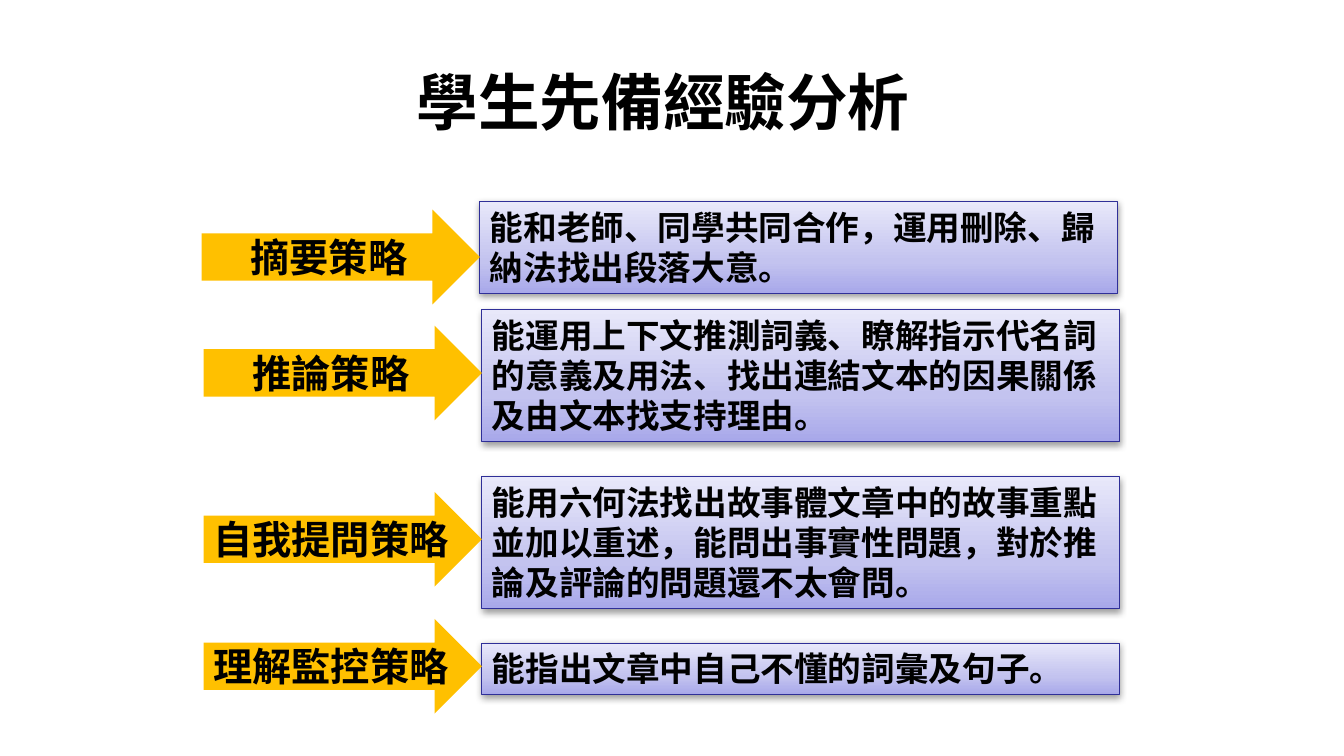
from copy import deepcopy

from lxml.etree import SubElement
from pptx import Presentation
from pptx.dml.color import RGBColor
from pptx.enum.shapes import MSO_SHAPE as SHAPE
from pptx.enum.text import MSO_ANCHOR as ANCHOR, PP_ALIGN as ALIGN
from pptx.oxml.ns import qn
from pptx.util import Pt

PX = 9144  # EMU per px, 100 px to the inch
FONT = "Noto Sans CJK SC"
BLACK, AMBER, NAVY = "000000", "FFC000", "2F2F98"
LILAC = [(0, "E8E8FA"), (0.65, "C3C3EF"), (1, "A8A8EA")]
ARROW_W, ARROW_H, NOTE_W = 276, 94, 632

# label, description, left, arrow top, note top, note height
STRATEGIES = [
    ("摘要策略", "能和老師、同學共同合作，運用刪除、歸納法找出段落大意。",
     200, 208, 200, 91),
    ("推論策略", "能運用上下文推測詞義、瞭解指示代名詞的意義及用法、找出連結文本的因果關係及由文本找支持理由。",
     202, 323, 307, 131),
    ("自我提問策略", "能用六何法找出故事體文章中的故事重點並加以重述，能問出事實性問題，對於推論及評論的問題還不太會問。",
     202, 488, 473, 131),
    ("理解監控策略", "能指出文章中自己不懂的詞彙及句子。",
     202, 614, 638, 51),
]


def px(*lengths):
    return [n * PX for n in lengths]


def color(value):
    return RGBColor.from_string(value)


def write(sp, text, size, align=ALIGN.LEFT, anchor=ANCHOR.TOP, wrap=True):
    tf = sp.text_frame
    tf.word_wrap = wrap
    tf.vertical_anchor = anchor
    p = tf.paragraphs[0]
    p.alignment = align
    r = p.add_run()
    r.text = text
    r.font.size = Pt(size)
    r.font.bold = True
    r.font.name = FONT
    r.font.color.rgb = color(BLACK)
    SubElement(r.font._element, qn("a:ea"), typeface=FONT)


def add_soft_shadow(sp):
    effects = SubElement(sp._element.spPr, qn("a:effectLst"))
    shadow = SubElement(effects, qn("a:outerShdw"), blurRad=str(Pt(5)),
                        dist=str(Pt(1.6)), dir="5400000", rotWithShape="0")
    tint = SubElement(shadow, qn("a:srgbClr"), val=BLACK)
    SubElement(tint, qn("a:alpha"), val="38000")


def fill_gradient(sp, stops):
    sp.fill.gradient()
    sp.fill.gradient_angle = 270
    stop_list = next(sp._element.spPr.iter(qn("a:gsLst")))
    while len(stop_list) < len(stops):
        stop_list.append(deepcopy(stop_list[0]))
    for stop, (position, value) in zip(sp.fill.gradient_stops, stops):
        stop.position = position
        stop.color.rgb = color(value)


def add_title(slide, text, x, y, w, h):
    write(slide.shapes.add_textbox(*px(x, y, w, h)), text, 44, align=ALIGN.CENTER)


def add_arrow(slide, text, x, y, w, h):
    sp = slide.shapes.add_shape(SHAPE.RIGHT_ARROW, *px(x, y, w, h))
    sp.shadow.inherit = False
    sp.fill.solid()
    sp.fill.fore_color.rgb = color(AMBER)
    sp.line.fill.background()
    write(sp, text, 28, align=ALIGN.CENTER, anchor=ANCHOR.MIDDLE, wrap=False)


def add_note(slide, text, x, y, w, h):
    sp = slide.shapes.add_shape(SHAPE.RECTANGLE, *px(x, y, w, h))
    fill_gradient(sp, LILAC)
    sp.line.color.rgb = color(NAVY)
    sp.line.width = Pt(0.75)
    add_soft_shadow(sp)
    write(sp, text, 24)


def add_strategy(slide, label, description, x, arrow_y, note_y, note_h):
    # The note starts where the arrow's tip ends
    add_note(slide, description, x + ARROW_W, note_y, NOTE_W, note_h)
    add_arrow(slide, label, x, arrow_y, ARROW_W, ARROW_H)


def main():
    prs = Presentation()
    prs.slide_width, prs.slide_height = px(1333, 750)
    slide = prs.slides.add_slide(prs.slide_layouts[6])
    add_title(slide, "學生先備經驗分析", 233, 58, 850, 125)
    for strategy in STRATEGIES:
        add_strategy(slide, *strategy)
    prs.save("out.pptx")


if __name__ == "__main__":
    main()
